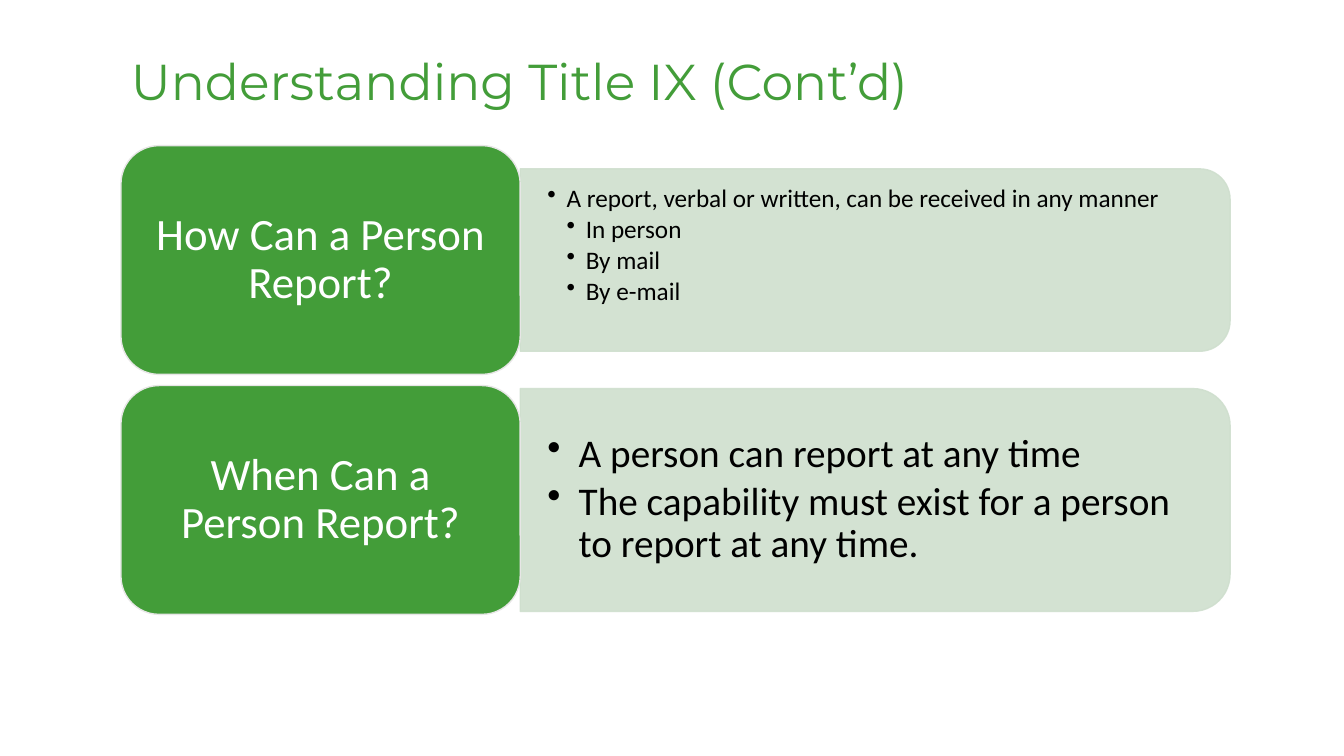
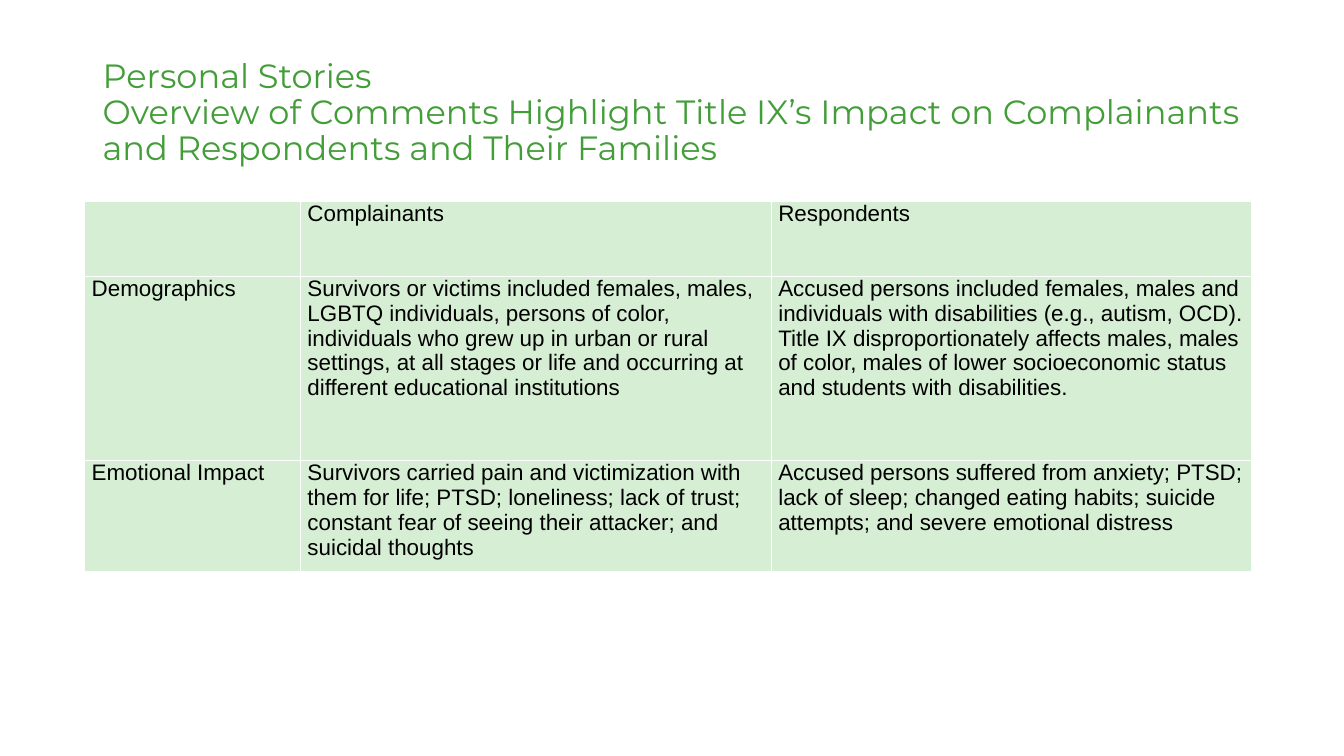
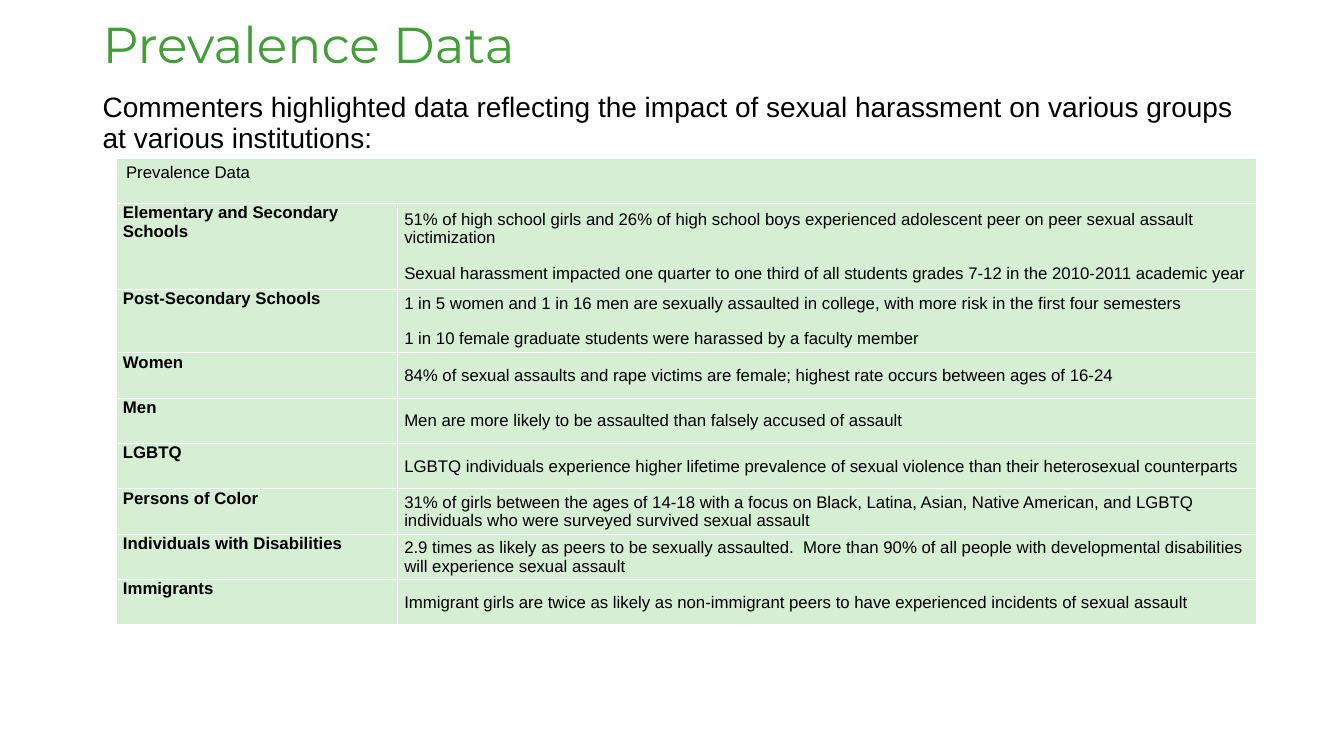
"""Build three Title IX slides: reporting cards, personal stories and prevalence data."""
from dataclasses import dataclass

from lxml.etree import SubElement
from pptx import Presentation
from pptx.dml.color import RGBColor
from pptx.enum.shapes import MSO_SHAPE
from pptx.enum.text import MSO_ANCHOR, PP_ALIGN
from pptx.oxml import parse_xml
from pptx.oxml.ns import nsdecls, qn
from pptx.presentation import Presentation as Deck
from pptx.shapes.autoshape import Shape
from pptx.slide import Slide
from pptx.table import _Cell as Cell
from pptx.text.text import TextFrame
from pptx.util import Inches, Pt

COLORS = {
    "green": "439D39",
    "panel": "CFDFCE",
    "cell": "D6EFD4",
    "outline": "E7E6E6",
    "black": "000000",
    "white": "FFFFFF",
}
CARD_LEFT, CARD_WIDTH, CARD_HEIGHT = 1.2, 3.96, 2.27
FIRST_CENTER, CARD_STEP = 2.58, 2.38
PANEL_WIDTH = 7.04


@dataclass(frozen=True)
class Topic:
    """A question card with the bullets of its answer panel."""

    question: str
    bullets: tuple[tuple[int, str], ...]
    size: float
    indent: float
    panel_height: float
    bottom: float = 0


@dataclass(frozen=True)
class Grid:
    """A table's place, measures, text size and rows of cell paragraphs."""

    left: float
    top: float
    widths: tuple[float, ...]
    heights: tuple[float, ...]
    size: float
    rows: tuple[tuple[str, ...], ...]
    labelled: bool = False


TOPICS = (
    Topic(
        "How Can a Person Report?",
        (
            (1, "A report, verbal or written, can be received in any manner"),
            (2, "In person"),
            (2, "By mail"),
            (2, "By e-mail"),
        ),
        18, 0.19, 1.81, 0.28,
    ),
    Topic(
        "When Can a Person Report?",
        (
            (1, "A person can report at any time"),
            (1, "The capability must exist for a person to report at any time."),
        ),
        28, 0.31, 2.21,
    ),
)

STORIES = Grid(
    0.84, 2, (2.14, 4.67, 4.76), (0.74, 1.83, 1.1), 16,
    (
        ("", "Complainants", "Respondents"),
        (
            "Demographics",
            "Survivors or victims included females, males, LGBTQ individuals, persons of color, "
            "individuals who grew up in urban or rural settings, at all stages or life and "
            "occurring at different educational institutions",
            "Accused persons included females, males and individuals with disabilities "
            "(e.g., autism, OCD). Title IX disproportionately affects males, males of color, "
            "males of lower socioeconomic status and students with disabilities.",
        ),
        (
            "Emotional Impact",
            "Survivors carried pain and victimization with them for life; PTSD; loneliness; "
            "lack of trust; constant fear of seeing their attacker; and suicidal thoughts",
            "Accused persons suffered from anxiety; PTSD; lack of sleep; changed eating habits; "
            "suicide attempts; and severe emotional distress",
        ),
    ),
)

PREVALENCE = Grid(
    1.15, 1.57, (2.79, 8.52), (0.45, 0.85, 0.63) + (0.45,) * 6, 12,
    (
        ("Prevalence Data",),
        (
            "Elementary and Secondary Schools",
            "51% of high school girls and 26% of high school boys experienced adolescent peer "
            "on peer sexual assault victimization\n"
            "Sexual harassment impacted one quarter to one third of all students grades 7-12 "
            "in the 2010-2011 academic year",
        ),
        (
            "Post-Secondary Schools",
            "1 in 5 women and 1 in 16 men are sexually assaulted in college, with more risk in "
            "the first four semesters\n"
            "1 in 10 female graduate students were harassed by a faculty member",
        ),
        (
            "Women",
            "84% of sexual assaults and rape victims are female; highest rate occurs between "
            "ages of 16-24",
        ),
        ("Men", "Men are more likely to be assaulted than falsely accused of assault"),
        (
            "LGBTQ",
            "LGBTQ individuals experience higher lifetime prevalence of sexual violence than "
            "their heterosexual counterparts",
        ),
        (
            "Persons of Color",
            "31% of girls between the ages of 14-18 with a focus on Black, Latina, Asian, Native "
            "American, and LGBTQ individuals who were surveyed survived sexual assault",
        ),
        (
            "Individuals with Disabilities",
            "2.9 times as likely as peers to be sexually assaulted.  More than 90% of all people "
            "with developmental disabilities will experience sexual assault",
        ),
        (
            "Immigrants",
            "Immigrant girls are twice as likely as non-immigrant peers to have experienced "
            "incidents of sexual assault",
        ),
    ),
    labelled=True,
)


def color(name: str) -> RGBColor:
    """Return a palette colour."""
    return RGBColor.from_string(COLORS[name])


def write(
    frame: TextFrame,
    text: str,
    *,
    size: float,
    font: str = "Arial",
    ink: str = "black",
    bold: bool = False,
    align: PP_ALIGN = PP_ALIGN.LEFT,
    spacing: float = 1,
    after: float = 0,
    level: int = 0,
    indent: float = 0,
) -> None:
    """Add one formatted paragraph, bulleted when it has a level."""
    para = frame.paragraphs[0]
    if para.runs:
        para = frame.add_paragraph()
    if level:
        properties = para._p.get_or_add_pPr()
        properties.set("marL", str(Inches(indent * level)))
        properties.set("indent", str(-Inches(indent)))
        SubElement(properties, qn("a:buChar")).set("char", "•")
    para.alignment = align
    para.line_spacing = spacing
    para.space_after = Pt(after)
    for number, line in enumerate(text.split("\n")):
        if number:
            para.add_line_break()
        span = para.add_run()
        span.text = line
        span.font.name = font
        span.font.size = Pt(size)
        span.font.bold = bold
        span.font.color.rgb = color(ink)


def set_frame(
    frame: TextFrame, anchor: MSO_ANCHOR, side: float = 0.1, top: float = 0.05, bottom: float = 0.05
) -> None:
    """Wrap a text frame and set its anchor and insets."""
    frame.word_wrap = True
    frame.vertical_anchor = anchor
    frame.margin_left = frame.margin_right = Inches(side)
    frame.margin_top, frame.margin_bottom = Inches(top), Inches(bottom)


def add_box(page: Slide, left: float, top: float, width: float, height: float) -> TextFrame:
    """Add a text box and return its frame."""
    return page.shapes.add_textbox(*map(Inches, (left, top, width, height))).text_frame


def add_page(deck: Deck, title: str, left: float, top: float, width: float, height: float, size: float) -> Slide:
    """Add a blank page with the shared title style."""
    page = deck.slides.add_slide(deck.slide_layouts[6])
    frame = add_box(page, left, top, width, height)
    set_frame(frame, MSO_ANCHOR.MIDDLE)
    write(frame, title, size=size, font="Montserrat", ink="green", spacing=0.9)
    return page


def add_shape(
    page: Slide, kind: MSO_SHAPE, left: float, top: float, width: float, height: float, fill: str, line: str
) -> Shape:
    """Add a flat filled shape with a thin outline."""
    shape = page.shapes.add_shape(kind, *map(Inches, (left, top, width, height)))
    shape.shadow.inherit = False
    shape.fill.solid()
    shape.fill.fore_color.rgb = color(fill)
    shape.line.color.rgb = color(line)
    shape.line.width = Pt(1)
    return shape


def add_topic(page: Slide, topic: Topic, center: float) -> None:
    """Draw a question card and its answer panel around a centre line."""
    panel_left = CARD_LEFT + CARD_WIDTH
    height = topic.panel_height
    panel = add_shape(
        page, MSO_SHAPE.ROUND_2_SAME_RECTANGLE,
        panel_left + (PANEL_WIDTH - height) / 2, center - PANEL_WIDTH / 2,
        height, PANEL_WIDTH, "panel", "panel",
    )
    panel.rotation = 90
    for paint in panel._element.spPr.iter(qn("a:srgbClr")):
        SubElement(paint, qn("a:alpha")).set("val", "90000")

    answer = add_box(page, panel_left, center - height / 2, 6.95, height)
    set_frame(answer, MSO_ANCHOR.MIDDLE, 0.27, 0, topic.bottom)
    for level, text in topic.bullets:
        write(
            answer, text, size=topic.size, font="Calibri", spacing=0.9,
            after=topic.size * 0.15, level=level, indent=topic.indent,
        )

    card = add_shape(
        page, MSO_SHAPE.ROUNDED_RECTANGLE, CARD_LEFT, center - CARD_HEIGHT / 2,
        CARD_WIDTH, CARD_HEIGHT, "green", "outline",
    )
    set_frame(card.text_frame, MSO_ANCHOR.MIDDLE, 0.13, 0.07, 0.07)
    write(
        card.text_frame, topic.question, size=32, font="Calibri", ink="white",
        align=PP_ALIGN.CENTER, spacing=0.9,
    )


def paint_cell(cell: Cell) -> None:
    """Give a cell the pale green fill and white borders."""
    cell.fill.solid()
    cell.fill.fore_color.rgb = color("cell")
    properties = cell._tc.get_or_add_tcPr()
    for place, side in enumerate("LRTB"):
        border = parse_xml(
            f'<a:ln{side} {nsdecls("a")} w="{Pt(1)}"><a:solidFill>'
            f'<a:srgbClr val="{COLORS["white"]}"/></a:solidFill></a:ln{side}>'
        )
        properties.insert(place, border)


def add_grid(page: Slide, grid: Grid) -> None:
    """Draw a table, merging any row that holds a single cell."""
    table = page.shapes.add_table(
        len(grid.heights), len(grid.widths), Inches(grid.left), Inches(grid.top),
        Inches(sum(grid.widths)), Inches(sum(grid.heights)),
    ).table
    table.first_row = table.horz_banding = False
    for column, width in zip(table.columns, grid.widths):
        column.width = Inches(width)
    for row_number, (row, height, texts) in enumerate(zip(table.rows, grid.heights, grid.rows)):
        row.height = Inches(height)
        for cell in row.cells:
            paint_cell(cell)
        merged = len(texts) == 1
        if merged:
            row.cells[0].merge(row.cells[len(grid.widths) - 1])
        for column_number, text in enumerate(texts):
            cell = row.cells[column_number]
            cell.margin_left = cell.margin_right = Inches(0.1 if merged else 0.07)
            cell.margin_top = cell.margin_bottom = Inches(0.05 if merged else 0)
            answer = grid.labelled and column_number > 0
            cell.vertical_anchor = MSO_ANCHOR.MIDDLE if answer else MSO_ANCHOR.TOP
            label = grid.labelled and row_number > 0 and column_number == 0
            for line in text.splitlines():
                write(cell.text_frame, line, size=grid.size, bold=label, after=0 if merged else 12)


def main() -> None:
    """Build and save the deck."""
    deck = Presentation()
    deck.slide_width, deck.slide_height = Inches(13.33), Inches(7.5)

    reporting = add_page(deck, "Understanding Title IX (Cont’d)", 1.2, 0.31, 11, 1.06, 36)
    for number, topic in enumerate(TOPICS):
        add_topic(reporting, topic, FIRST_CENTER + number * CARD_STEP)

    stories_title = (
        "Personal Stories\nOverview of Comments Highlight Title IX’s Impact on Complainants "
        "and Respondents and Their Families"
    )
    stories = add_page(deck, stories_title, 0.92, 0.4, 11.5, 1.45, 24)
    add_grid(stories, STORIES)

    prevalence = add_page(deck, "Prevalence Data", 0.92, 0.06, 11.5, 0.81, 36)
    intro = add_box(prevalence, 0.92, 0.88, 11.5, 0.69)
    set_frame(intro, MSO_ANCHOR.TOP)
    write(
        intro,
        "Commenters highlighted data reflecting the impact of sexual harassment on various "
        "groups at various institutions:",
        size=20, spacing=0.9,
    )
    add_grid(prevalence, PREVALENCE)

    deck.save("out.pptx")


if __name__ == "__main__":
    main()
